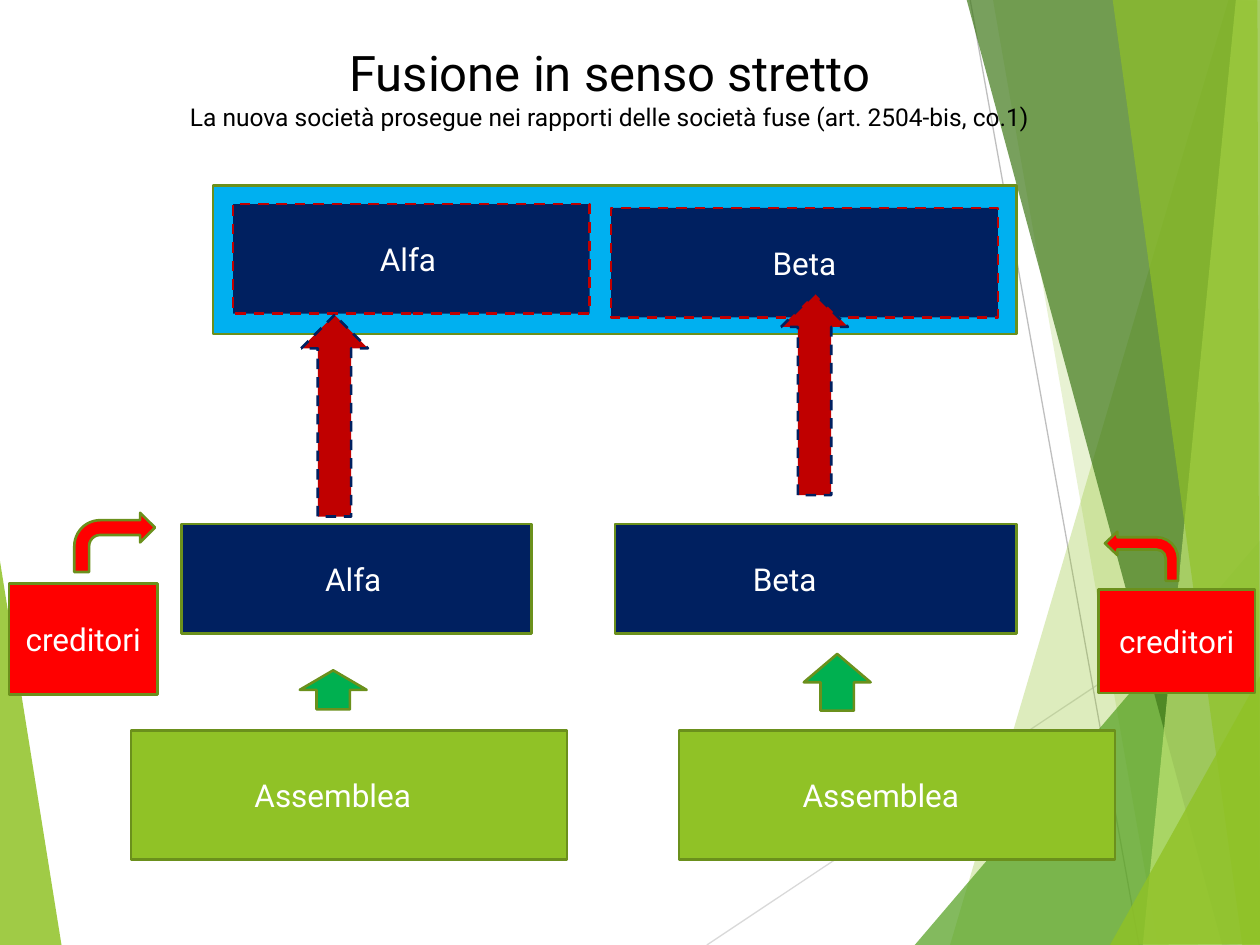
from typing import NamedTuple

from lxml import etree
from pptx import Presentation
from pptx.dml.color import RGBColor
from pptx.enum.dml import MSO_LINE
from pptx.enum.shapes import MSO_CONNECTOR, MSO_SHAPE
from pptx.enum.text import MSO_ANCHOR, PP_ALIGN
from pptx.oxml.ns import qn
from pptx.util import Inches, Pt

RECT, UP_ARROW, BENT_ARROW = MSO_SHAPE.RECTANGLE, MSO_SHAPE.UP_ARROW, MSO_SHAPE.BENT_ARROW
STRAIGHT, DASH = MSO_CONNECTOR.STRAIGHT, MSO_LINE.DASH
CENTER, MIDDLE = PP_ALIGN.CENTER, MSO_ANCHOR.MIDDLE

FONT = "Roboto"
COLORS = {
    "lime": "90C226", "green": "54A021", "forest": "3F7819", "pale": "C0E474",
    "olive": "6B901C", "sky": "00B0F0", "navy": "002060", "crimson": "C00000",
    "red": "FF0000", "emerald": "00B050", "white": "FFFFFF", "black": "000000",
    "silver": "D9D9D9", "grey": "BFBFBF",
}
COLUMNS, ROWS = 100, 75
CELL = Inches(10) // COLUMNS


class Facet(NamedTuple):
    """A translucent polygon of the backdrop; corners are (column, row)."""
    color: str
    opacity: int
    corners: list[tuple[float, float]]


class Ray(NamedTuple):
    color: str
    start: tuple[float, float]
    end: tuple[float, float]


class Block(NamedTuple):
    """A box or arrow placed by column, row, columns wide and rows high."""
    left: float
    top: float
    width: float
    height: float
    fill: str
    label: str = ""
    preset: MSO_SHAPE = RECT
    outline: str = "olive"
    dashed: bool = False
    mirrored: bool = False
    adjustments: tuple[float, ...] = ()


LEFT_FACET = Facet("lime", 85, [(-0.1, 43.9), (4.9, 75.1), (-0.1, 75)])
RAYS = [
    Ray("silver", (56.1, 75), (100.1, 45.7)),
    Ray("grey", (77, 0), (90.4, 75)),
]
RIGHT_FACETS = [
    Facet("lime", 30, [(97.5, 0), (75.4, 75), (100.2, 75.1), (100.1, 0.1)]),
    Facet("lime", 20, [(78.8, -0.1), (91.9, 75), (100.1, 75), (100.1, -0.1)]),
    Facet("green", 72, [(72.6, 75), (100, 42.9), (100.1, 75)]),
    Facet("forest", 70, [(76.7, -0.1), (97, 75), (100.1, 74.9), (100.1, -0.1)]),
    Facet("pale", 70, [(98.1, -0.1), (90.7, 75), (100.1, 75), (100, -0.1)]),
    Facet("lime", 65, [(88.3, -0.1), (98.6, 75), (100, 75), (99.8, -0.1)]),
    Facet("lime", 80, [(88.1, 75), (100.1, 53.5), (100.1, 74.9)]),
]

# A trailing tab pushes a label to the left of its box's centre.
MERGED_COMPANY = [
    Block(16.9, 14.7, 63.8, 11.8, "sky"),
    Block(18.5, 16.2, 28.3, 8.7, "navy", "Alfa\t", outline="crimson", dashed=True),
    Block(48.5, 16.5, 30.7, 8.7, "navy", "Beta", outline="crimson", dashed=True),
]
ASSEMBLIES = [Block(left, 58, 34.6, 10.2, "lime", "Assemblea\t") for left in (10.4, 53.9)]
APPROVALS = [
    Block(23.8, 53.2, 5.3, 3.1, "emerald", preset=UP_ARROW),
    Block(63.8, 51.9, 5.3, 4.5, "emerald", preset=UP_ARROW),
]
CREDITORS = [
    Block(0.7, 46.3, 11.8, 8.8, "red", "creditori"),
    Block(87.2, 46.8, 12.4, 8.2, "red", "creditori"),
    Block(5.9, 40.7, 6.4, 4.7, "red", preset=BENT_ARROW),
    Block(87.7, 42.2, 5.8, 3.9, "red", preset=BENT_ARROW, mirrored=True,
          adjustments=(0.25, 0.237, 0.25, 0.438)),
]
COMPANIES = [
    Block(14.4, 41.6, 27.8, 8.7, "navy", "Alfa\t"),
    Block(48.8, 41.6, 31.9, 8.7, "navy", "Beta\t"),
]
TRANSFERS = [
    Block(left, top, 5.3, 16, "crimson", preset=UP_ARROW, outline="navy", dashed=True)
    for left, top in ((23.9, 25), (62, 23.3))
]
HEADING = [
    ("Fusione in senso stretto", 28),
    ("La nuova società prosegue nei rapporti delle società fuse (art. 2504-bis, co.1)", 14),
]


def rgb(name: str) -> RGBColor:
    return RGBColor.from_string(COLORS[name])


def cells(*counts: float) -> list[int]:
    return [round(count * CELL) for count in counts]


def format_paragraph(paragraph, size: float, color: str) -> None:
    paragraph.alignment = CENTER
    for run in paragraph.runs:
        run.font.name = FONT
        run.font.size = Pt(size)
        run.font.color.rgb = rgb(color)


def draw_facet(shapes, facet: Facet) -> None:
    first, *others = [cells(*corner) for corner in facet.corners]
    builder = shapes.build_freeform(*first)
    builder.add_line_segments(others, close=True)
    shape = builder.convert_to_shape()
    shape.shadow.inherit = False
    shape.line.fill.background()
    shape.fill.solid()
    shape.fill.fore_color.rgb = rgb(facet.color)
    color = shape._element.spPr.find(qn("a:solidFill"))[0]
    etree.SubElement(color, qn("a:alpha"), val=str(facet.opacity * 1000))


def draw_ray(shapes, ray: Ray) -> None:
    line = shapes.add_connector(STRAIGHT, *cells(*ray.start, *ray.end))
    line.line.color.rgb = rgb(ray.color)
    line.line.width = Pt(0.75)
    etree.SubElement(line._element.spPr, qn("a:effectLst"))


def draw_block(shapes, block: Block) -> None:
    place = cells(block.left, block.top, block.width, block.height)
    shape = shapes.add_shape(block.preset, *place)
    shape.shadow.inherit = False
    shape.fill.solid()
    shape.fill.fore_color.rgb = rgb(block.fill)
    shape.line.color.rgb = rgb(block.outline)
    shape.line.width = Pt(1.5)
    if block.dashed:
        shape.line.dash_style = DASH
    if block.mirrored:
        shape._element.spPr.find(qn("a:xfrm")).set("flipH", "1")
    for index, value in enumerate(block.adjustments):
        shape.adjustments[index] = value
    if block.label:
        frame = shape.text_frame
        frame.text = block.label
        frame.vertical_anchor = MIDDLE
        format_paragraph(frame.paragraphs[0], 18, "white")


def draw_heading(shapes) -> None:
    frame = shapes.add_textbox(*cells(11.8, 2.9, 73.2, 8.1)).text_frame
    frame.word_wrap = True
    frame.text = "\n".join(text for text, _ in HEADING)
    for paragraph, (_, size) in zip(frame.paragraphs, HEADING):
        format_paragraph(paragraph, size, "black")


def main() -> None:
    deck = Presentation()
    deck.slide_width, deck.slide_height = COLUMNS * CELL, ROWS * CELL
    shapes = deck.slides.add_slide(deck.slide_layouts[6]).shapes

    draw_facet(shapes, LEFT_FACET)
    for ray in RAYS:
        draw_ray(shapes, ray)
    for facet in RIGHT_FACETS:
        draw_facet(shapes, facet)
    for block in MERGED_COMPANY + ASSEMBLIES + APPROVALS:
        draw_block(shapes, block)
    draw_heading(shapes)
    for block in CREDITORS + COMPANIES + TRANSFERS:
        draw_block(shapes, block)

    deck.save("out.pptx")


if __name__ == "__main__":
    main()
